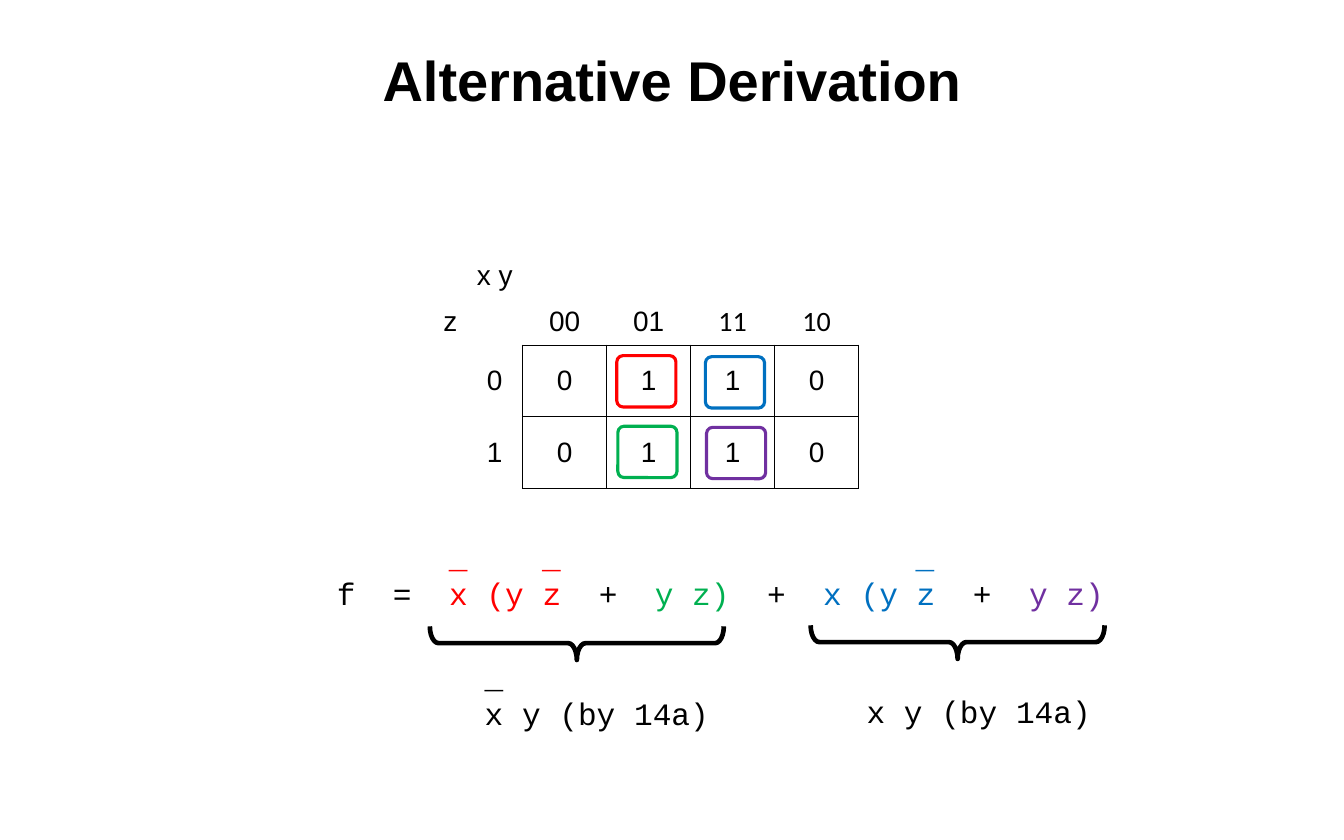
"""Build a slide that derives a Boolean function from a Karnaugh map."""
from lxml.etree import SubElement
from pptx import Presentation
from pptx.dml.color import RGBColor
from pptx.enum.shapes import MSO_SHAPE
from pptx.enum.text import MSO_ANCHOR, PP_ALIGN
from pptx.oxml.ns import qn
from pptx.util import Pt

COLORS = {
    "black": "000000", "white": "FFFFFF", "red": "FF0000",
    "blue": "0070C0", "green": "00B050", "purple": "7030A0",
}
TITLE = "Alternative Derivation"
MAP_ROWS = [
    ["", "x y", "", "", "", ""],
    ["z", "", "00", "01", "11", "10"],
    ["", "0", "0", "1", "1", "0"],
    ["", "1", "0", "1", "1", "0"],
]
COLUMN_WIDTHS = [36, 36, 54, 54, 54, 54]
ROW_HEIGHTS = [30, 30, 46, 46]
CALIBRI_LABELS = ("11", "10")
FIRST_BODY = 2
RING_COLORS = [["red", "blue"], ["green", "purple"]]
BAR_COLUMNS = [6, 11, 31]
CHARACTER_WIDTH = 12
FORMULA = [
    [("\t_\t_\t", "red"), ("_", "blue")],
    [("f  =  ", "black"), ("x (y z  ", "red"), ("+ ", "black"), (" y z)  ", "green"),
     ("+  ", "black"), ("x (y z  ", "blue"), ("+  ", "black"), ("y z)", "purple")],
]
RESULTS = [
    (304.5, 419, [[("_", "black")], [("x y (by 14a)", "black")]]),
    (550, 441.7, [[("x y (by 14a)", "black")]]),
]
BRACES = [(360, 319), (604.8, 318.3)]


def rgb(name):
    return RGBColor.from_string(COLORS[name])


def style(span, font, size, color, bold=False):
    span.font.name, span.font.size, span.font.bold = font, Pt(size), bold
    span.font.color.rgb = rgb(color)


def add_text(page, left, top, width, height, lines, font="Courier New", size=20, bold=False):
    box = page.shapes.add_textbox(Pt(left), Pt(top), Pt(width), Pt(height))
    frame = box.text_frame
    frame.word_wrap = True
    for index, line in enumerate(lines):
        para = frame.paragraphs[0] if index == 0 else frame.add_paragraph()
        for text, color in line:
            span = para.add_run()
            span.text = text
            style(span, font, size, color, bold)
    return frame


def add_tab_stops(para, positions):
    stops = SubElement(para._p.get_or_add_pPr(), qn("a:tabLst"))
    for position in positions:
        SubElement(stops, qn("a:tab"), pos=str(Pt(position)), algn="l")


def add_outline(page, kind, left, top, width, height, rotation, adjustments, color, weight):
    shape = page.shapes.add_shape(kind, Pt(left), Pt(top), Pt(width), Pt(height))
    shape.shadow.inherit = False
    shape.rotation = rotation
    for index, value in enumerate(adjustments):
        shape.adjustments[index] = value
    shape.fill.background()
    shape.line.color.rgb = rgb(color)
    shape.line.width = Pt(weight)


def set_borders(cell, row, column):
    in_rows, in_columns = row >= FIRST_BODY, column >= FIRST_BODY
    black = {
        "lnL": in_rows and in_columns,
        "lnR": in_rows and column >= FIRST_BODY - 1,
        "lnT": in_rows and in_columns,
        "lnB": in_columns and row >= FIRST_BODY - 1,
    }
    properties = cell._tc.get_or_add_tcPr()
    for index, (side, is_black) in enumerate(black.items()):
        line = properties.makeelement(qn(f"a:{side}"), w=str(Pt(1)))
        fill = SubElement(line, qn("a:solidFill"))
        SubElement(fill, qn("a:srgbClr"), val=COLORS["black" if is_black else "white"])
        properties.insert(index, line)


def add_map(page):
    table = page.shapes.add_table(
        len(MAP_ROWS), len(COLUMN_WIDTHS), Pt(264), Pt(162),
        Pt(sum(COLUMN_WIDTHS)), Pt(sum(ROW_HEIGHTS))).table
    table.first_row = table.horz_banding = False
    for column, width in zip(table.columns, COLUMN_WIDTHS):
        column.width = Pt(width)
    for row, height in zip(table.rows, ROW_HEIGHTS):
        row.height = Pt(height)
    for row, texts in enumerate(MAP_ROWS):
        for column, text in enumerate(texts):
            cell = table.cell(row, column)
            cell.margin_left = Pt(15 if text == "z" else 0)
            cell.margin_right = cell.margin_top = cell.margin_bottom = 0
            cell.vertical_anchor = MSO_ANCHOR.MIDDLE
            cell.fill.solid()
            cell.fill.fore_color.rgb = rgb("white")
            set_borders(cell, row, column)
            para = cell.text_frame.paragraphs[0]
            para.text = text
            para.alignment = PP_ALIGN.CENTER
            for span in para.runs:
                style(span, "Calibri" if text in CALIBRI_LABELS else "Arial", 18, "black")


def main():
    deck = Presentation()
    deck.slide_width, deck.slide_height = Pt(864), Pt(540)
    page = deck.slides.add_slide(deck.slide_layouts[6])

    title = add_text(page, 0, 24, 864, 54, [[(TITLE, "black")]], "Arial", 36, True)
    title.vertical_anchor = MSO_ANCHOR.MIDDLE
    title.paragraphs[0].alignment = PP_ALIGN.CENTER

    add_map(page)
    formula = add_text(page, 209.5, 342, 523.5, 55.5, FORMULA)
    add_tab_stops(formula.paragraphs[0], [n * CHARACTER_WIDTH for n in BAR_COLUMNS])
    for left, top in BRACES:
        add_outline(page, MSO_SHAPE.RIGHT_BRACE, left, top, 21.6, 189, 90,
                    (0.26, 0.5), "black", 3)
    for left, top, lines in RESULTS:
        add_text(page, left, top, 160, 10 + 22.7 * len(lines), lines)
    for row, names in enumerate(RING_COLORS):
        for column, color in enumerate(names):
            add_outline(page, MSO_SHAPE.ROUNDED_RECTANGLE,
                        399 + 57 * column + 0.7 * row, 226.1 + 45.4 * row + 0.7 * column,
                        33, 38, 270, (0.12,), color, 2)
    deck.save("out.pptx")


if __name__ == "__main__":
    main()
